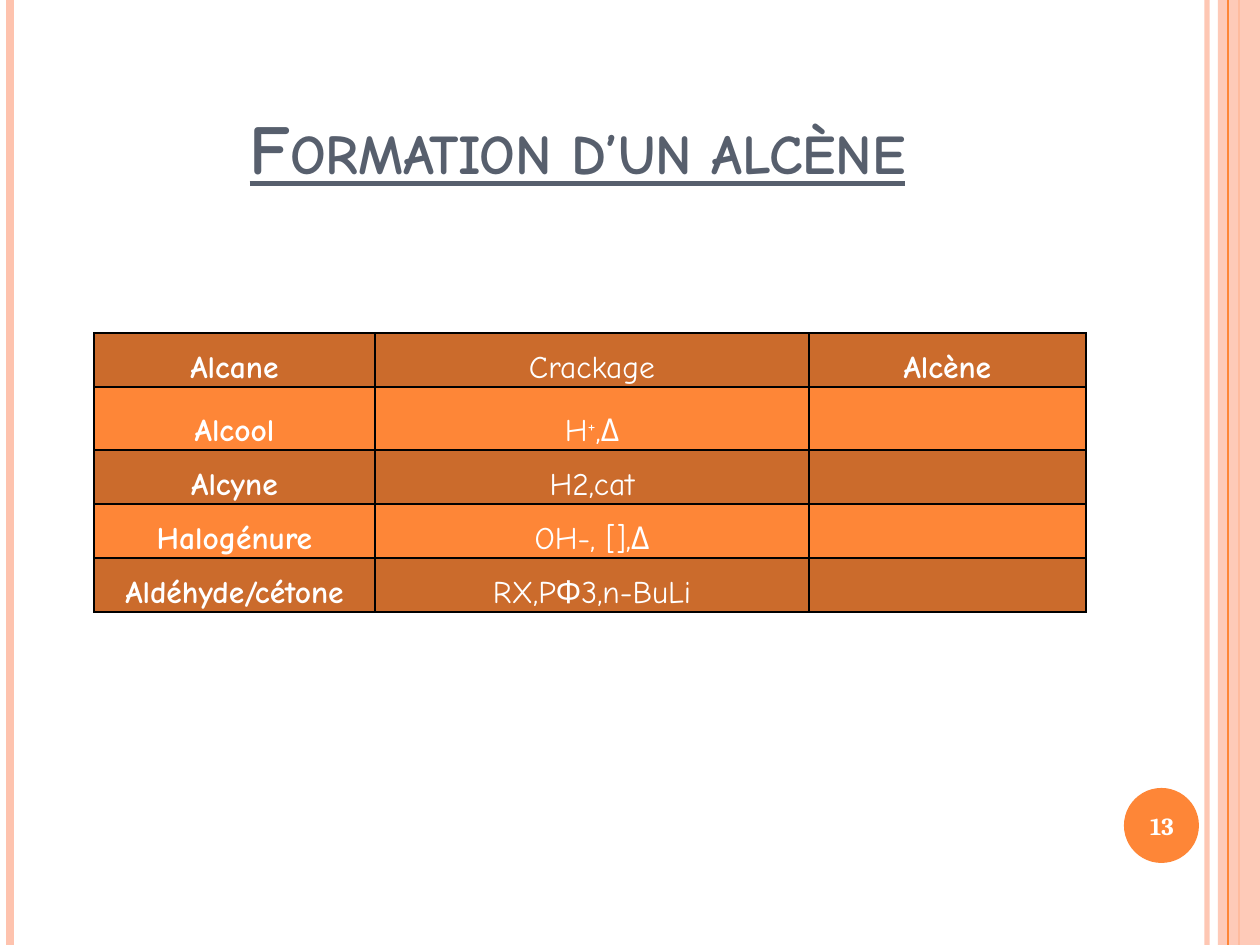
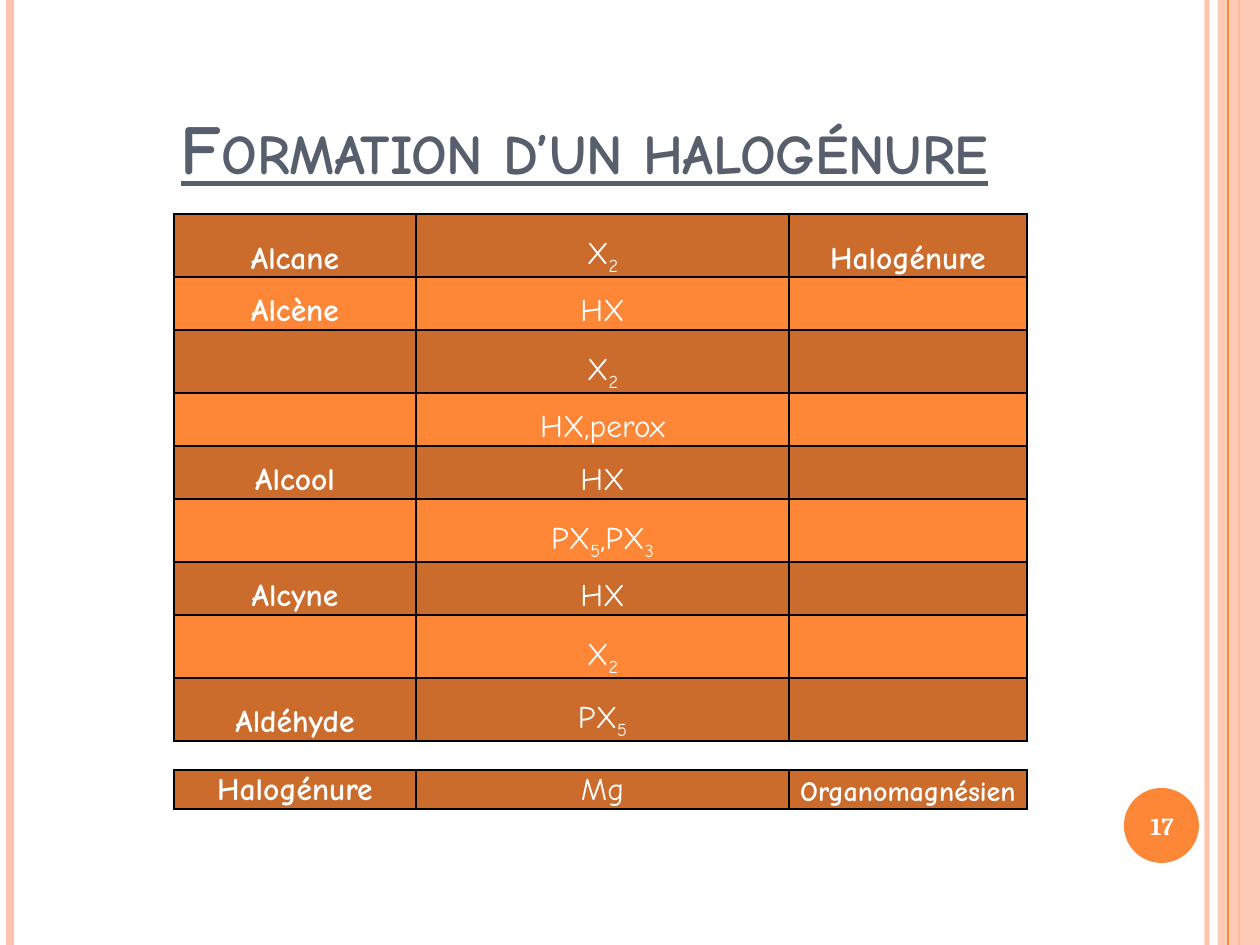
from lxml import etree
from pptx import Presentation
from pptx.dml.color import RGBColor
from pptx.enum.shapes import MSO_CONNECTOR, MSO_SHAPE
from pptx.enum.text import MSO_ANCHOR, PP_ALIGN
from pptx.oxml.ns import qn
from pptx.util import Pt

STRAIGHT = MSO_CONNECTOR.STRAIGHT
RECT, OVAL = MSO_SHAPE.RECTANGLE, MSO_SHAPE.OVAL
MIDDLE, BOTTOM = MSO_ANCHOR.MIDDLE, MSO_ANCHOR.BOTTOM
CENTER = PP_ALIGN.CENTER

SLIDE_W, SLIDE_H = 1260, 945
SCALE = 914400 / 126
COLORS = {"orange": "FE8637", "peach": "FEC3AE", "rust": "CB6B2C",
          "slate": "575F6D", "white": "FFFFFF", "black": "000000"}
TITLE = {"size": Pt(40), "name": "Comic Neue", "bold": True, "underline": True}
NUMBER = {"size": Pt(14), "name": "Cambria", "bold": True}
CELL = {"size": Pt(18), "name": "Comic Neue"}
MARGINS = {"margin_left": 1, "margin_right": 1, "margin_top": 1, "margin_bottom": 0}
BASELINES = {"^": "30000", "_": "-25000"}


def px(n):
    return round(n * SCALE)


def rgb(color):
    return RGBColor.from_string(COLORS[color])


def set_alpha(sp, percent):
    """Make the first colour of a shape or line partly transparent."""
    clr = next(sp._element.spPr.iter(qn("a:srgbClr")))
    etree.SubElement(clr, qn("a:alpha"), val=str(percent * 1000))


def set_borders(cell):
    tc_pr = cell._tc.get_or_add_tcPr()
    for side in ("lnL", "lnR", "lnT", "lnB"):
        ln = etree.SubElement(tc_pr, qn(f"a:{side}"), w=str(Pt(1)))
        fill = etree.SubElement(ln, qn("a:solidFill"))
        etree.SubElement(fill, qn("a:srgbClr"), val=COLORS["black"])


class Deck:
    """Holds the presentation, its style and the current slide."""

    def __init__(self):
        self.prs = Presentation()
        self.prs.slide_width, self.prs.slide_height = px(SLIDE_W), px(SLIDE_H)
        self.s = None

    def slide(self, title, left, width, number):
        """Start a slide with its side bands, title and page number."""
        self.s = self.prs.slides.add_slide(self.prs.slide_layouts[6])
        self.band(1207, "peach", 3, 93)
        self.band(10, "peach", 4.5)
        self.band(1239, "orange", 1.5)
        self.shape(RECT, 1218, 0, 42, SLIDE_H, "peach", 87)
        self.band(1228, "orange", 0.75)
        self.shape(OVAL, 1124, 788, 75, 75, "orange")
        r = self.text(title, left, 38, width, 157, BOTTOM, "slate", TITLE)
        r._r.get_or_add_rPr().set("cap", "small")
        self.text(number, 1120, 790, 84, 72, MIDDLE, "white", NUMBER)

    def band(self, x, color, weight, alpha=100):
        """Draw a vertical line over the full slide height."""
        line = self.s.shapes.add_connector(STRAIGHT, px(x), 0, px(x), px(SLIDE_H))
        line.line.color.rgb = rgb(color)
        line.line.width = Pt(weight)
        etree.SubElement(line._element.spPr, qn("a:effectLst"))
        if alpha < 100:
            set_alpha(line, alpha)

    def shape(self, kind, x, y, w, h, color, alpha=100):
        sp = self.s.shapes.add_shape(kind, px(x), px(y), px(w), px(h))
        sp.shadow.inherit = False
        sp.fill.solid()
        sp.fill.fore_color.rgb = rgb(color)
        sp.line.fill.background()
        if alpha < 100:
            set_alpha(sp, alpha)

    def run(self, p, text, color, style):
        p.alignment = CENTER
        r = p.add_run()
        r.text = text
        r.font.color.rgb = rgb(color)
        for name, value in style.items():
            setattr(r.font, name, value)
        return r

    def text(self, text, x, y, w, h, anchor, color, style):
        tf = self.s.shapes.add_textbox(px(x), px(y), px(w), px(h)).text_frame
        tf.word_wrap = True
        tf.vertical_anchor = anchor
        return self.run(tf.paragraphs[0], text, color, style)

    def table(self, x, y, widths, heights, rows):
        """Draw a striped table, with the outer columns in bold."""
        frame = self.s.shapes.add_table(len(rows), len(widths), px(x), px(y),
                                        px(sum(widths)), px(sum(heights)))
        table = frame.table
        table.first_row = table.horz_banding = False
        for column, width in zip(table.columns, widths):
            column.width = px(width)
        for i, (row, height) in enumerate(zip(rows, heights)):
            table.rows[i].height = px(height)
            for j, text in enumerate(row):
                self.cell(table.cell(i, j), text, ("rust", "orange")[i % 2], j != 1)

    def cell(self, cell, text, color, bold):
        """Fill a cell; "|" parts the runs, "^" raises and "_" lowers one."""
        set_borders(cell)
        cell.fill.solid()
        cell.fill.fore_color.rgb = rgb(color)
        cell.vertical_anchor = BOTTOM
        for name, value in MARGINS.items():
            setattr(cell, name, px(value))
        size = Pt(16) if text == "Organomagnésien" else CELL["size"]
        for part in filter(None, text.split("|")):
            r = self.run(cell.text_frame.paragraphs[0], part.lstrip("^_"), "white",
                         {**CELL, "size": size, "bold": bold})
            if part[0] in BASELINES:
                r._r.get_or_add_rPr().set("baseline", BASELINES[part[0]])


def main():
    deck = Deck()

    deck.slide("Formation d’un alcène", 63, 1029, "13")
    deck.table(94, 333, [281, 434, 277], [54, 63, 54, 54, 54], [
        ("Alcane", "Crackage", "Alcène"),
        ("Alcool", "H|^+|,Δ", ""),
        ("Alcyne", "H2,cat", ""),
        ("Halogénure", "OH-, [],Δ", ""),
        ("Aldéhyde/cétone", "RX,PΦ3,n-BuLi", ""),
    ])

    deck.slide("Formation d’un halogénure", 44, 1081, "17")
    widths = [242, 373, 238]
    reactions = [
        ("Alcane", "X|_2", "Halogénure"),
        ("Alcène", "HX", ""),
        ("", "X|_2", ""),
        ("", "HX,perox", ""),
        ("Alcool", "HX", ""),
        ("", "PX|_5|,PX|_3", ""),
        ("Alcyne", "HX", ""),
        ("", "X|_2", ""),
        ("Aldéhyde", "PX|_5", ""),
    ]
    heights = [63 if "_" in reagent else 53 for _, reagent, _ in reactions]
    deck.table(174, 214, widths, heights, reactions)
    deck.table(174, 770, widths, [38], [("Halogénure", "Mg", "Organomagnésien")])

    deck.prs.save("out.pptx")


if __name__ == "__main__":
    main()
